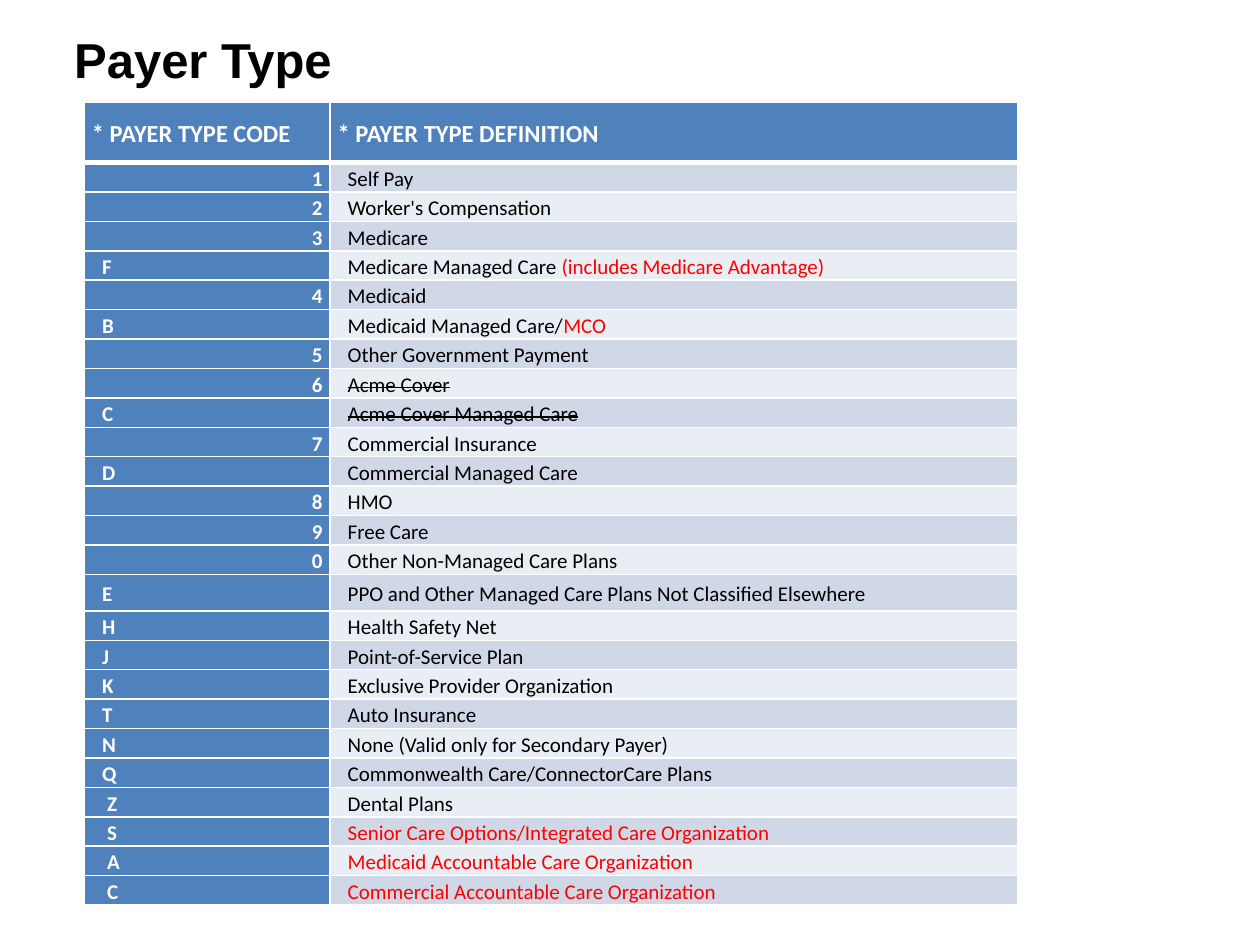
"""Build the payer type slide: a title over a two-column code table."""
from dataclasses import dataclass

from lxml.etree import SubElement
from pptx import Presentation
from pptx.dml.color import RGBColor as RGB
from pptx.enum.text import MSO_ANCHOR as Anchor, PP_ALIGN as Align
from pptx.oxml.ns import qn
from pptx.util import Inches, Pt

COLORS = {"head": "4F81BD", "odd": "D0D8E8", "even": "E9EDF4",
          "white": "FFFFFF", "black": "000000", "red": "FF0000"}
WIDTH, HEIGHT = 10, 7.5
LEFT, TOP = 0.067 * WIDTH, 0.108 * HEIGHT
TABLE_W, TABLE_H = 7.41, 6.38
COLUMNS = (1.95, 5.46)
HEAD_H, TALL_H = 0.48, 0.29
INSET, SPACE = 0.06, 0.04


@dataclass
class Payer:
    code: str
    name: str = ""
    red: str = ""
    strike: bool = False
    spaces: int = 2
    tall: bool = False


PAYERS = [
    Payer("1", "Self Pay"),
    Payer("2", "Worker's Compensation"),
    Payer("3", "Medicare"),
    Payer("F", "Medicare Managed Care ", "(includes Medicare Advantage)"),
    Payer("4", "Medicaid"),
    Payer("B", "Medicaid Managed Care/", "MCO"),
    Payer("5", "Other Government Payment"),
    Payer("6", "Acme Cover", strike=True),
    Payer("C", "Acme Cover Managed Care", strike=True),
    Payer("7", "Commercial Insurance"),
    Payer("D", "Commercial Managed Care"),
    Payer("8", "HMO"),
    Payer("9", "Free Care"),
    Payer("0", "Other Non-Managed Care Plans"),
    Payer("E", "PPO and Other Managed Care Plans Not Classified Elsewhere", tall=True),
    Payer("H", "Health Safety Net"),
    Payer("J", "Point-of-Service Plan"),
    Payer("K", "Exclusive Provider Organization"),
    Payer("T", "Auto Insurance"),
    Payer("N", "None (Valid only for Secondary Payer)"),
    Payer("Q", "Commonwealth Care/ConnectorCare Plans"),
    Payer("Z", "Dental Plans", spaces=3),
    Payer("S", red="Senior Care Options/Integrated Care Organization", spaces=3),
    Payer("A", red="Medicaid Accountable Care Organization", spaces=3),
    Payer("C", red="Commercial Accountable Care Organization", spaces=3),
]


def style(r, size: float, color: str, bold: bool, font: str = "Calibri") -> None:
    r.font.name, r.font.size, r.font.bold = font, Pt(size), bold
    r.font.color.rgb = RGB.from_string(COLORS[color])


def add_title(s, text: str) -> None:
    box = s.shapes.add_textbox(Inches(0.49), Inches(0.12), Inches(8.79), Inches(0.69))
    tf = box.text_frame
    tf.word_wrap, tf.vertical_anchor = True, Anchor.MIDDLE
    tf.text = text
    style(tf.paragraphs[0].runs[0], 28, "black", True, "Arial")


def add_borders(cell, top: float = 1, bottom: float = 1) -> None:
    tc_pr = cell._tc.get_or_add_tcPr()
    for side, width in zip("LRTB", (1, 1, top, bottom)):
        ln = SubElement(tc_pr, qn(f"a:ln{side}"), w=str(Pt(width)))
        fill = SubElement(ln, qn("a:solidFill"))
        SubElement(fill, qn("a:srgbClr"), val=COLORS["white"])


def fill_cell(cell, parts: list[tuple[str, str]], fill: str, size: float = 12,
              bold: bool = False, spaces: int = 0, right: bool = False) -> None:
    cell.margin_left, cell.margin_right = Inches(INSET + spaces * SPACE), Inches(INSET)
    cell.margin_top = cell.margin_bottom = 0
    cell.vertical_anchor = Anchor.MIDDLE
    cell.fill.solid()
    cell.fill.fore_color.rgb = RGB.from_string(COLORS[fill])
    p = cell.text_frame.paragraphs[0]
    p.alignment = Align.RIGHT if right else Align.LEFT
    p.line_spacing = 1.15
    for text, color in parts:
        if text:
            r = p.add_run()
            r.text = text
            style(r, size, color, bold)


def add_payer_table(s) -> None:
    frame = s.shapes.add_table(len(PAYERS) + 1, len(COLUMNS), Inches(LEFT),
                               Inches(TOP), Inches(TABLE_W), Inches(TABLE_H))
    table = frame.table
    table.horz_banding = False
    for column, width in zip(table.columns, COLUMNS):
        column.width = Inches(width)
    row_h = (TABLE_H - HEAD_H - TALL_H) / (len(PAYERS) - 1)
    table.rows[0].height = Inches(HEAD_H)
    for col, text in enumerate(("* PAYER TYPE CODE", "* PAYER TYPE DEFINITION")):
        add_borders(table.cell(0, col), bottom=3)
        fill_cell(table.cell(0, col), [(text, "white")], "head", 14, True)
    for row, payer in enumerate(PAYERS, 1):
        table.rows[row].height = Inches(TALL_H if payer.tall else row_h)
        code, name = table.cell(row, 0), table.cell(row, 1)
        for cell in (code, name):
            add_borders(cell, top=3 if row == 1 else 1)
        digit = payer.code.isdigit()
        fill_cell(code, [(payer.code, "white")], "head", bold=True,
                  spaces=0 if digit else payer.spaces, right=digit)
        fill_cell(name, [(payer.name, "black"), (payer.red, "red")],
                  "odd" if row % 2 else "even", spaces=2)
        if payer.strike:
            for r in name.text_frame.paragraphs[0].runs:
                r.font._element.set("strike", "sngStrike")


def main() -> None:
    prs = Presentation()
    prs.slide_width, prs.slide_height = Inches(WIDTH), Inches(HEIGHT)
    s = prs.slides.add_slide(prs.slide_layouts[6])
    add_title(s, "Payer Type")
    add_payer_table(s)
    prs.save("out.pptx")


if __name__ == "__main__":
    main()
